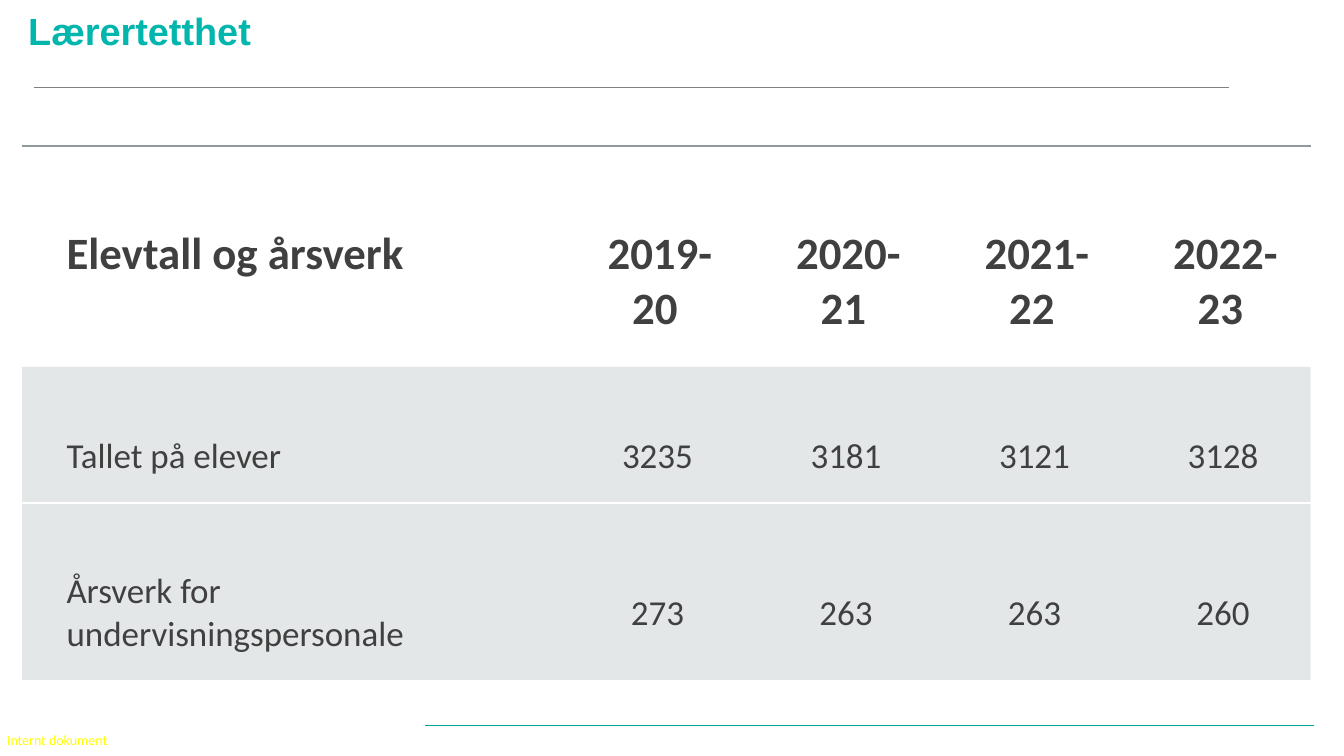
import pptx
import pptx.dml.color
import pptx.enum.shapes
import pptx.enum.text
import pptx.oxml
import pptx.oxml.ns
import pptx.util
from pptx.util import Inches

ALIGN = pptx.enum.text.PP_ALIGN
ANCHOR = pptx.enum.text.MSO_ANCHOR
EDGES = ("lnL", "lnR", "lnT", "lnB")


def rgb(color):
    return pptx.dml.color.RGBColor.from_string(color)


def xml(tag, body="", attrs=""):
    ns = pptx.oxml.ns.nsdecls("a")
    return pptx.oxml.parse_xml(f"<a:{tag} {ns} {attrs}>{body}</a:{tag}>")


def write(tf, text, size=25, color="404040", font="Calibri", bold=False, align=ALIGN.LEFT):
    p = tf.paragraphs[0]
    p.alignment = align
    r = p.add_run()
    r.text = text
    r.font.size = pptx.util.Pt(size)
    r.font.name = font
    r.font.bold = bold
    r.font.color.rgb = rgb(color)


class Slide:
    teal = "01B6AD"
    band = "B4BCBE"
    band_alpha = 35
    rule = "8F9A9D"

    def __init__(self, prs):
        self.s = prs.slides.add_slide(prs.slide_layouts[5])

    def title(self, text, *box):
        sp = self.s.shapes.title
        sp.left, sp.top, sp.width, sp.height = map(Inches, box)
        sp.text_frame.vertical_anchor = ANCHOR.MIDDLE
        write(sp.text_frame, text, size=27, color=self.teal, font="Arial", bold=True)

    def label(self, text, *box, **style):
        tf = self.s.shapes.add_textbox(*map(Inches, box)).text_frame
        tf.word_wrap = True
        tf.margin_left = tf.margin_top = tf.margin_right = tf.margin_bottom = 0
        write(tf, text, **style)

    def line(self, x1, x2, y, color, width):
        cxn = self.s.shapes.add_connector(
            pptx.enum.shapes.MSO_CONNECTOR.STRAIGHT,
            Inches(x1), Inches(y), Inches(x2), Inches(y))
        cxn.line.color.rgb = rgb(color)
        cxn.line.width = pptx.util.Pt(width)
        cxn._element.spPr.append(xml("effectLst"))

    def borders(self, cell, **edges):
        """Draw the given edges as (color, alpha percent) and clear the others."""
        tcPr = cell._tc.get_or_add_tcPr()
        for edge in EDGES:
            body, width = "<a:noFill/>", 0
            if edge in edges:
                color, alpha = edges[edge]
                width = pptx.util.Pt(1.5)
                body = (f'<a:solidFill><a:srgbClr val="{color}">'
                        f'<a:alpha val="{alpha * 1000}"/></a:srgbClr></a:solidFill>')
            tcPr.append(xml(edge, body, f'w="{width}"'))

    def fill_band(self, cell):
        cell.fill.solid()
        cell.fill.fore_color.rgb = rgb(self.band)
        color = cell._tc.tcPr.find(".//" + pptx.oxml.ns.qn("a:solidFill") + "[last()]")
        color = cell._tc.tcPr.find(pptx.oxml.ns.qn("a:solidFill"))
        color[0].append(xml("alpha", attrs=f'val="{self.band_alpha * 1000}"'))

    def table(self, rows, left, top, widths, heights):
        table = self.s.shapes.add_table(
            len(rows), len(widths), Inches(left), Inches(top),
            Inches(sum(widths)), Inches(sum(heights))).table
        table.first_row = table.horz_banding = False
        for column, width in zip(table.columns, widths):
            column.width = Inches(width)
        for row, height in zip(table.rows, heights):
            row.height = Inches(height)
        for i, row in enumerate(rows):
            header = i == 0
            pad = 0.26 if header else 0.23
            for j, text in enumerate(row):
                cell = table.cell(i, j)
                cell.margin_left = Inches(0.44)
                cell.margin_right = cell.margin_bottom = Inches(pad)
                # One line of room above the text
                cell.margin_top = Inches(0.8 if header else 0.65)
                cell.vertical_anchor = ANCHOR.TOP if header else ANCHOR.MIDDLE
                if header:
                    self.borders(cell, lnT=(self.rule, 60))
                    cell.fill.background()
                else:
                    white = {"lnB": ("FFFFFF", 100)}
                    if i > 1:
                        white["lnT"] = ("FFFFFF", 100)
                    self.borders(cell, **white)
                    self.fill_band(cell)
                write(cell.text_frame, f"{text} ", size=32 if header else 25,
                      bold=header, align=ALIGN.CENTER if j else ALIGN.LEFT)


def main():
    prs = pptx.Presentation()
    prs.slide_width, prs.slide_height = Inches(13.33), Inches(7.5)
    slide = Slide(prs)

    # Frame: classification label and rules
    slide.label("Internt dokument", 0.07, 7.26, 1.04, 0.17, size=10, color="FFFF00")
    slide.line(0.34, 12.19, 0.87, "808080", 0.5)
    slide.line(13.03, 4.22, 7.2, "00A498", 0.75)

    # Title
    slide.title("Lærertetthet", 0.18, 0.02, 11.24, 0.56)

    # Pupils and teaching staff per school year
    slide.table(
        [["Elevtall og årsverk", "2019-20", "2020-21", "2021-22", "2022-23"],
         ["Tallet på elever", 3235, 3181, 3121, 3128],
         ["Årsverk for undervisningspersonale", 273, 263, 263, 260]],
        0.22, 1.45, [5.3] + [1.87] * 4, [2.19, 1.35, 1.77])

    prs.save("out.pptx")


if __name__ == "__main__":
    main()
